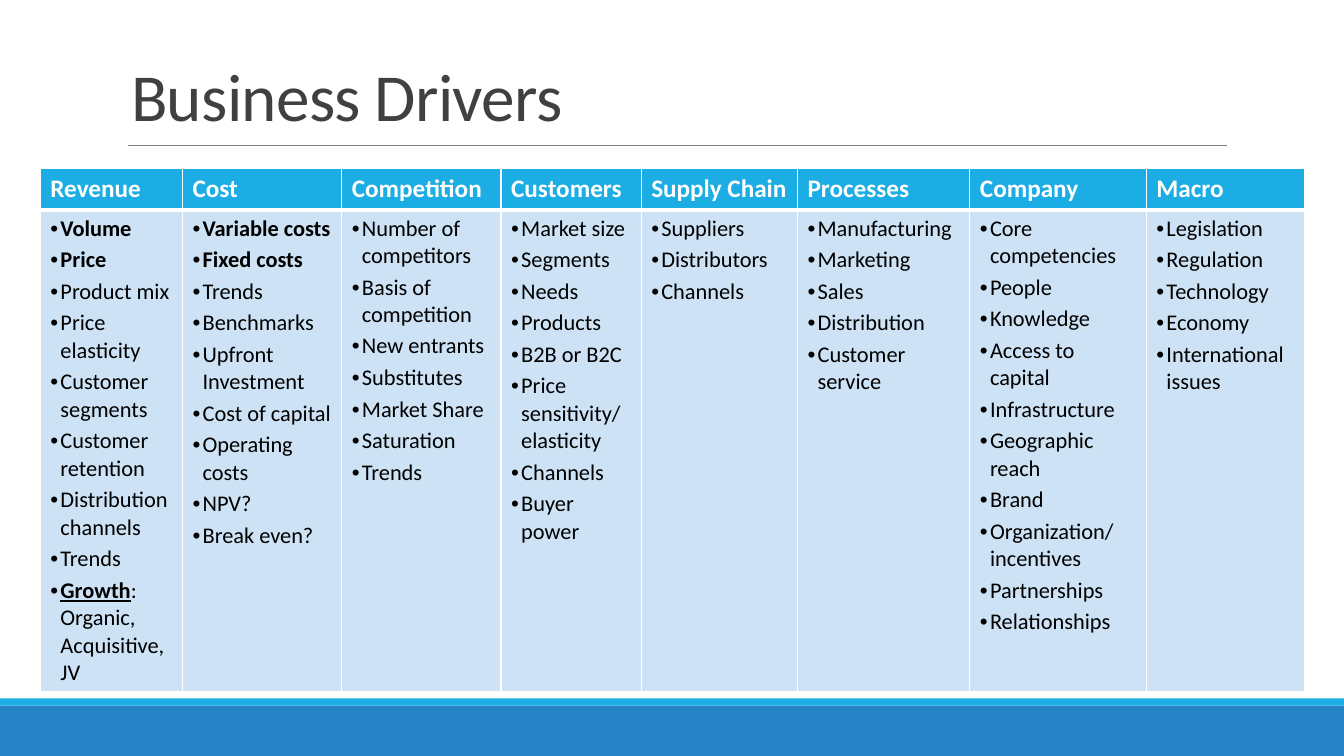
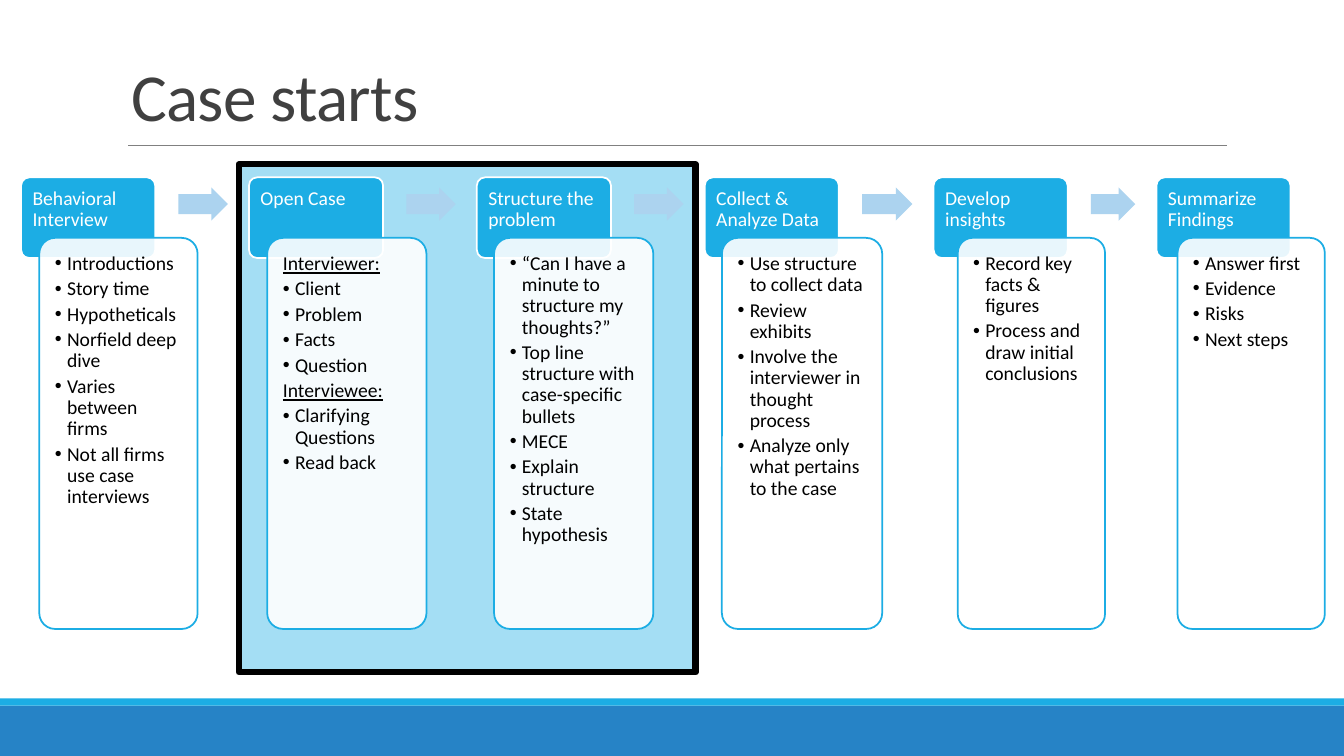
from lxml import etree
from pptx import Presentation
from pptx.dml.color import RGBColor
from pptx.enum.shapes import MSO_CONNECTOR, MSO_SHAPE
from pptx.enum.text import MSO_ANCHOR, MSO_AUTO_SIZE, PP_ALIGN
from pptx.oxml.ns import qn
from pptx.util import Inches, Pt

RECT = MSO_SHAPE.RECTANGLE
ROUNDED = MSO_SHAPE.ROUNDED_RECTANGLE
ARROW = MSO_SHAPE.RIGHT_ARROW
STRAIGHT = MSO_CONNECTOR.STRAIGHT
TOP, BOTTOM = MSO_ANCHOR.TOP, MSO_ANCHOR.BOTTOM
LEFT = PP_ALIGN.LEFT
NO_FIT = MSO_AUTO_SIZE.NONE

FONT = "Calibri"
WHITE, BLACK, TITLE_GREY, RULE_GREY = "FFFFFF", "000000", "404040", "808080"
SKY, BLUE = "1CADE4", "2683C6"
PALE_CELL, PALE_ARROW, PALE_FOCUS = "CDE3F5", "ACD3EF", "A4DEF4"

WIDTH, HEIGHT = 13.33, 7.5
BANDS = [(7, 0.5, BLUE), (6.93, 0.07, SKY)]

DRIVERS = [
    ("Revenue", 1.41, ["Volume", "Price", "Product mix", "Price elasticity",
                       "Customer segments", "Customer retention",
                       "Distribution channels", "Trends",
                       ("Growth", ": Organic, Acquisitive, JV")]),
    ("Cost", 1.58, ["Variable costs", "Fixed costs", "Trends", "Benchmarks",
                    "Upfront Investment", "Cost of capital", "Operating costs",
                    "NPV?", "Break even?"]),
    ("Competition", 1.58, ["Number of competitors", "Basis of competition",
                           "New entrants", "Substitutes", "Market Share",
                           "Saturation", "Trends"]),
    ("Customers", 1.39, ["Market size", "Segments", "Needs", "Products",
                         "B2B or B2C", "Price sensitivity/ elasticity",
                         "Channels", "Buyer power"]),
    ("Supply Chain", 1.55, ["Suppliers", "Distributors", "Channels"]),
    ("Processes", 1.71, ["Manufacturing", "Marketing", "Sales", "Distribution",
                         "Customer service"]),
    ("Company", 1.75, ["Core competencies", "People", "Knowledge",
                       "Access to capital", "Infrastructure",
                       "Geographic reach", "Brand", "Organization/ incentives",
                       "Partnerships", "Relationships"]),
    ("Macro", 1.57, ["Legislation", "Regulation", "Technology", "Economy",
                     "International issues"]),
]
KEY_DRIVERS = {"Volume", "Price", "Variable costs", "Fixed costs"}
ROW_HEIGHTS = [0.41, 4.77]

STEPS = [
    ("Behavioral Interview", 0.21, 0.39, 1.57,
     ["Introductions", "Story time", "Hypotheticals", "Norfield deep dive",
      "Varies between firms", "Not all firms use case interviews"]),
    ("Open Case", 2.47, 2.65, 1.58,
     ["Interviewer:", "Client", "Problem", "Facts", "Question",
      "Interviewee:", "Clarifying Questions", "Read back"]),
    ("Structure the problem", 4.73, 4.9, 1.58,
     ["“Can I have a minute to structure my thoughts?”",
      "Top line structure with case-specific bullets", "MECE",
      "Explain structure", "State hypothesis"]),
    ("Collect & Analyze Data", 6.99, 7.16, 1.59,
     ["Use structure to collect data", "Review exhibits",
      "Involve the interviewer in thought process",
      "Analyze only what pertains to the case"]),
    ("Develop insights", 9.26, 9.5, 1.46,
     ["Record key facts & figures", "Process and draw initial conclusions"]),
    ("Summarize Findings", 11.47, 11.68, 1.46,
     ["Answer first", "Evidence", "Risks", "Next steps"]),
]


def rgb(code):
    return RGBColor.from_string(code)


def style(paragraph, size, color, bold=None, underline=None):
    font = paragraph.font
    font.name, font.size, font.bold, font.underline = FONT, Pt(size), bold, underline
    font.color.rgb = rgb(color)
    paragraph.alignment = LEFT


def add_items(frame, items, size, hang, line_spacing=None):
    for index, item in enumerate(items):
        paragraph = frame.paragraphs[0] if index == 0 else frame.add_paragraph()
        parts = item if isinstance(item, tuple) else (item,)
        for part in parts:
            paragraph.add_run().text = part
        if len(parts) > 1:
            lead = paragraph.runs[0].font
            lead.bold = lead.underline = True
        is_heading = parts[0].endswith(":")
        paragraph.space_after = Pt(3)
        paragraph.line_spacing = line_spacing
        properties = paragraph._p.get_or_add_pPr()
        properties.set("marL", str(Inches(hang)))
        properties.set("indent", str(-Inches(hang)))
        if is_heading:
            etree.SubElement(properties, qn("a:buNone"))
        else:
            etree.SubElement(properties, qn("a:buFont"), typeface="Arial")
            etree.SubElement(properties, qn("a:buChar"), char="•")
        style(paragraph, size, BLACK, item in KEY_DRIVERS or None, is_heading or None)


def add_box(slide, kind, at, fill, line=None, weight=1.25, adjust=()):
    box = slide.shapes.add_shape(kind, *map(Inches, at))
    box.shadow.inherit = False
    for index, value in enumerate(adjust):
        box.adjustments[index] = value
    box.fill.solid()
    box.fill.fore_color.rgb = rgb(fill)
    if line:
        box.line.color.rgb = rgb(line)
        box.line.width = Pt(weight)
    else:
        box.line.fill.background()
    return box


def prepare_frame(box, left, top, right, bottom):
    frame = box.text_frame
    frame.word_wrap = True
    frame.vertical_anchor = TOP
    frame.margin_left, frame.margin_top = Inches(left), Inches(top)
    frame.margin_right, frame.margin_bottom = Inches(right), Inches(bottom)
    return frame


def new_slide(prs, layout, heading):
    slide = prs.slides.add_slide(layout)
    title = slide.shapes.title
    title.left, title.top, title.width, title.height = map(Inches, (1.2, 0.31, 11, 1.08))
    frame = title.text_frame
    frame.text = heading
    frame.word_wrap = True
    frame.auto_size = NO_FIT
    frame.vertical_anchor = BOTTOM
    paragraph = frame.paragraphs[0]
    paragraph.line_spacing = 0.85
    style(paragraph, 48, TITLE_GREY)
    paragraph.runs[0].font._element.set("spc", "-50")
    return slide


def furnish_layout(layout, slide):
    for placeholder in list(layout.placeholders)[1:]:
        placeholder.element.getparent().remove(placeholder.element)
    parts = [add_box(slide, RECT, (0, top, WIDTH, height), color)
             for top, height, color in BANDS]
    rule = slide.shapes.add_connector(STRAIGHT, *map(Inches, (1.27, 1.44, 12.17, 1.44)))
    rule.line.color.rgb = rgb(RULE_GREY)
    rule.line.width = Pt(0.5)
    etree.SubElement(rule.element.spPr, qn("a:effectLst"))
    for part in parts + [rule]:
        layout.shapes.element.append(part.element)


def set_borders(cell, bottom, top):
    properties = cell._tc.get_or_add_tcPr()
    sides = [("lnL", 1), ("lnR", 1), ("lnT", top), ("lnB", bottom)]
    for index, (side, weight) in enumerate(sides):
        border = etree.Element(qn(f"a:{side}"), w=str(Pt(weight)))
        fill = etree.SubElement(border, qn("a:solidFill"))
        etree.SubElement(fill, qn("a:srgbClr"), val=WHITE)
        properties.insert(index, border)


def fill_cell(cell, color, top, bottom):
    cell.fill.solid()
    cell.fill.fore_color.rgb = rgb(color)
    set_borders(cell, bottom, top)


def add_drivers(slide):
    total = sum(width for _, width, _ in DRIVERS)
    table = slide.shapes.add_table(
        2, len(DRIVERS), *map(Inches, (0.4, 1.67, total, sum(ROW_HEIGHTS)))).table
    for row, height in zip(table.rows, ROW_HEIGHTS):
        row.height = Inches(height)
    for column, (heading, width, items) in enumerate(DRIVERS):
        table.columns[column].width = Inches(width)
        head, body = table.cell(0, column), table.cell(1, column)
        head.text = heading
        style(head.text_frame.paragraphs[0], 18, WHITE, True)
        add_items(body.text_frame, items, 16, 0.1)
        fill_cell(head, SKY, 1, 3)
        fill_cell(body, PALE_CELL, 3, 1)


def add_steps(slide):
    add_box(slide, RECT, (2.37, 1.63, 4.53, 5.04), PALE_FOCUS, BLACK, 4.5)
    next_lefts = [step[1] for step in STEPS[1:]] + [None]
    for (heading, left, card_left, card_width, items), next_left in zip(STEPS, next_lefts):
        tab = add_box(slide, ROUNDED, (left, 1.76, 1.33, 0.8), SKY, WHITE, adjust=[0.1])
        frame = prepare_frame(tab, 0.09, 0.09, 0.09, 0.04)
        frame.text = heading
        frame.paragraphs[0].line_spacing = 0.9
        style(frame.paragraphs[0], 14, WHITE)

        card = add_box(slide, ROUNDED, (card_left, 2.36, card_width, 3.88), WHITE, SKY,
                       adjust=[0.1])
        card_color = card.element.spPr.find(qn("a:solidFill")).find(qn("a:srgbClr"))
        etree.SubElement(card_color, qn("a:alpha"), val="90000")
        add_items(prepare_frame(card, 0.11, 0.11, 0.11, 0.11), items, 14, 0.12, 0.9)

        if next_left is not None:
            start, end = left + 1.56, next_left - 0.21
            add_box(slide, ARROW, (start, 1.86, end - start, 0.33), PALE_ARROW,
                    adjust=[0.6, 0.5])


def main():
    prs = Presentation()
    prs.slide_width, prs.slide_height = Inches(WIDTH), Inches(HEIGHT)
    layout = prs.slide_layouts[5]
    drivers_slide = new_slide(prs, layout, "Business Drivers")
    furnish_layout(layout, drivers_slide)
    add_drivers(drivers_slide)
    add_steps(new_slide(prs, layout, "Case starts"))
    prs.save("out.pptx")


if __name__ == "__main__":
    main()
